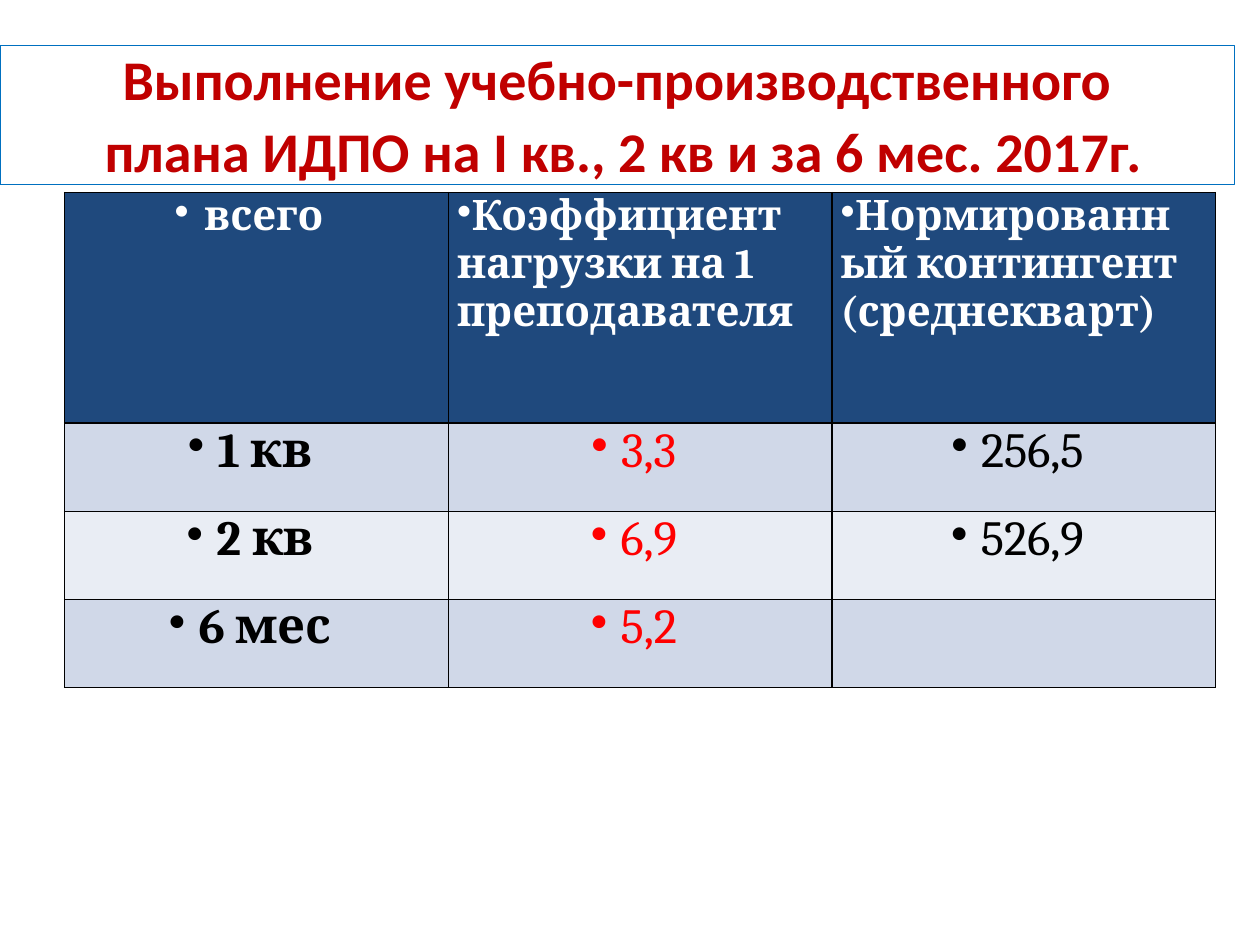
from pptx import Presentation
from pptx.dml.color import RGBColor
from pptx.enum import text
from pptx.oxml import parse_xml
from pptx.oxml.ns import nsdecls
from pptx.util import Pt

DARK_RED = RGBColor(0xC0, 0x00, 0x00)
BLUE = RGBColor(0x00, 0x70, 0xC0)
NAVY = RGBColor(0x1F, 0x49, 0x7D)
WHITE = RGBColor(0xFF, 0xFF, 0xFF)
BLACK = RGBColor(0x00, 0x00, 0x00)
RED = RGBColor(0xFF, 0x00, 0x00)
BAND_DARK = RGBColor(0xD0, 0xD8, 0xE8)
BAND_LIGHT = RGBColor(0xE9, 0xED, 0xF4)


def format_text(paragraph, wording, color, **font_values):
    run = paragraph.add_run()
    run.text = wording
    run.font.color.rgb = color
    for attribute, value in font_values.items():
        setattr(run.font, attribute, value)
    paragraph.space_before = Pt(font_values["size"].pt * 0.2)


def add_borders(cell):
    properties = cell._tc.get_or_add_tcPr()
    for side in ("lnL", "lnR", "lnT", "lnB"):
        properties.append(parse_xml(
            f'<a:{side} {nsdecls("a")} w="12700"><a:solidFill>'
            f'<a:srgbClr val="{BLACK}"/></a:solidFill></a:{side}>'))


presentation = Presentation()
presentation.slide_width, presentation.slide_height = Pt(720), Pt(540)
slide = presentation.slides.add_slide(presentation.slide_layouts[5])

# Title in a thin blue frame
heading = slide.shapes.title
heading.left, heading.top, heading.width, heading.height = Pt(0), Pt(26.2), Pt(705.6), Pt(79.2)
heading.line.color.rgb = BLUE
heading.line.width = Pt(0.75)
frame = heading.text_frame
frame.word_wrap = True
frame.auto_size = text.MSO_AUTO_SIZE.NONE
frame.vertical_anchor = text.MSO_ANCHOR.TOP
heading_lines = ("Выполнение учебно-производственного",
                 " плана ИДПО на I кв., 2 кв и за 6 мес. 2017г.")
for index, line in enumerate(heading_lines):
    paragraph = frame.add_paragraph() if index else frame.paragraphs[0]
    paragraph.alignment = text.PP_ALIGN.CENTER
    paragraph.line_spacing = 0.9
    format_text(paragraph, line, DARK_RED, size=Pt(32), name="Calibri", bold=True)

# Load and enrolment by period
periods = [
    ("всего", "Коэффициент нагрузки на 1 преподавателя",
     "Нормированный контингент (среднекварт)"),
    ("1 кв", "3,3", "256,5"),
    ("2 кв", "6,9", "526,9"),
    ("6 мес", "5,2", ""),
]
table = slide.shapes.add_table(4, 3, Pt(37), Pt(110), Pt(657.6), Pt(283)).table
for column in table.columns:
    column.width = Pt(219.2)
for index, row in enumerate(table.rows):
    row.height = Pt(50.4) if index else Pt(131.8)

column_colors = (BLACK, RED, BLACK)
for r, period in enumerate(periods):
    for c, wording in enumerate(period):
        cell = table.cell(r, c)
        add_borders(cell)
        cell.fill.solid()
        cell.fill.fore_color.rgb = (BAND_DARK if r % 2 else BAND_LIGHT) if r else NAVY
        margins = {"margin_left": 5, "margin_right": 5, "margin_top": 0, "margin_bottom": 0}
        for attribute, value in margins.items():
            setattr(cell, attribute, Pt(value))
        if not wording:
            continue
        paragraph = cell.text_frame.paragraphs[0]
        if r or c == 0:
            paragraph.alignment = text.PP_ALIGN.CENTER
        format_text(paragraph, wording, column_colors[c] if r else WHITE,
                    size=Pt(28 if r else 24), name="Cambria", bold=r == 0 or c == 0)
        bullet = parse_xml(f'<a:buChar {nsdecls("a")} char="•"/>')
        paragraph._p.get_or_add_pPr().append(bullet)

presentation.save("out.pptx")
